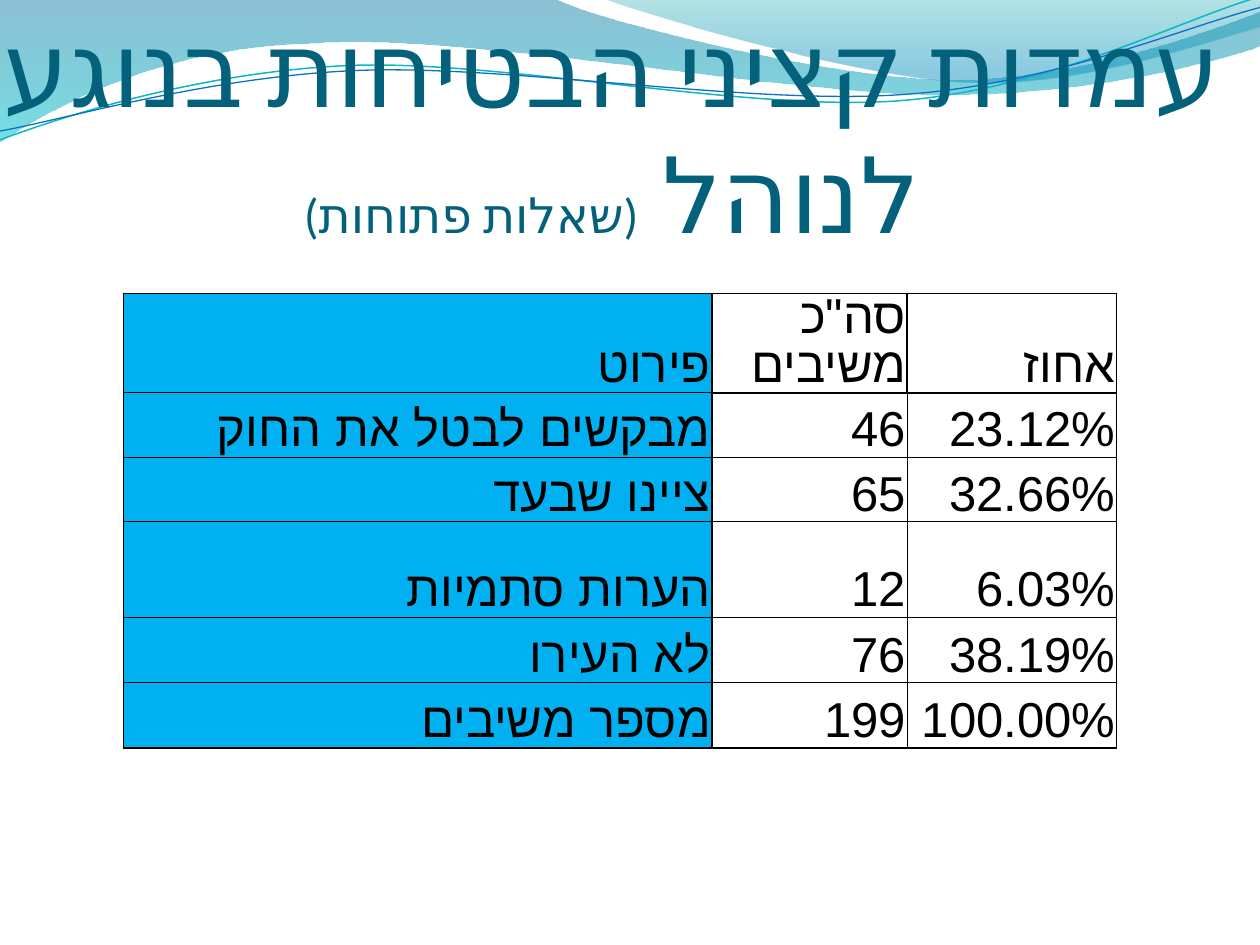
from dataclasses import dataclass
from math import cos, radians, sin
from lxml.etree import SubElement as Sub
from pptx import Presentation as Deck
from pptx.dml.color import RGBColor as Rgb
from pptx.enum.lang import MSO_LANGUAGE_ID as Lang
from pptx.enum.text import MSO_ANCHOR as Anchor, PP_ALIGN as Align
from pptx.oxml.ns import qn
from pptx.util import Inches as In, Pt


@dataclass(frozen=True)
class Theme:
    font: str = "Calibri"
    body: str = "Arial"
    title: str = "04617B"
    ink: str = "000000"
    blue: str = "00B0F0"
    teal: str = "0AB8BF"
    navy: str = "0F6FC6"
    big: int = 60
    small: int = 28
    thick: float = 1
    thin: float = 0.5
    tilt: float = 2.7


def turn(spot, mid, angle):
    x, y = spot[0] - mid[0], spot[1] - mid[1]
    c, s = cos(radians(angle)), sin(radians(angle))
    return mid[0] + x * c - y * s, mid[1] + x * s + y * c


class Page:
    """Draws styled elements on one slide."""

    def __init__(self, slide, theme):
        self.slide, self.theme = slide, theme

    def form(self, start, steps, close):
        spots = [(In(x), In(y)) for step in steps for x, y in step]
        pen = self.slide.shapes.build_freeform(In(start[0]), In(start[1]))
        pen.add_line_segments(spots, close=close)
        shape = pen.convert_to_shape()
        shape.shadow.inherit = False
        lines = iter(list(shape._element.iter(qn("a:lnTo"))))
        for step in steps:
            parts = [next(lines) for spot in step]
            if len(parts) == 3:
                parts[0].tag = qn("a:cubicBezTo")
                for part in parts[1:]:
                    parts[0].append(part[0])
                    part.getparent().remove(part)
        return shape

    def wave(self, start, steps, stops):
        shape = self.form(start, steps, True)
        shape.line.fill.background()
        shape.fill.gradient()
        shape.fill.gradient_angle = 270
        for stop, (place, color, alpha) in zip(shape.fill.gradient_stops, stops):
            stop.position = place
            stop.color.rgb = Rgb.from_string(color)
        tints = shape._element.spPr.iter(qn("a:srgbClr"))
        for tint, (place, color, alpha) in zip(tints, stops):
            Sub(tint, qn("a:alpha"), val=str(alpha * 1000))

    def curve(self, mid, start, steps, color, width):
        tilt = self.theme.tilt
        flat = [[turn(spot, mid, tilt) for spot in step] for step in steps]
        shape = self.form(turn(start, mid, tilt), flat, False)
        shape.rotation = -tilt
        shape.fill.background()
        shape.line.color.rgb = Rgb.from_string(color)
        shape.line.width = Pt(width)

    def style(self, run, font, size, color):
        run.font.name, run.font.size = font, Pt(size)
        run.font.language_id = Lang.HEBREW
        run.font.color.rgb = Rgb.from_string(color)
        Sub(run._r.get_or_add_rPr(), qn("a:cs"), typeface=font)

    def align(self, para, side):
        para.alignment = side
        para._p.get_or_add_pPr().set("rtl", "1")

    def title(self, box, main, note):
        look = self.theme
        frame = self.slide.shapes.add_textbox(*map(In, box)).text_frame
        frame.word_wrap = True
        frame.vertical_anchor = Anchor.BOTTOM
        frame.margin_left = frame.margin_right = frame.margin_bottom = 0
        para = frame.paragraphs[0]
        self.align(para, Align.CENTER)
        for text, size in ((main, look.big), (note, look.small)):
            run = para.add_run()
            run.text = text
            self.style(run, look.font, size, look.title)

    def edge(self, cell, tag, heavy):
        look = self.theme
        width = Pt(look.thick if heavy else look.thin)
        line = Sub(cell._tc.get_or_add_tcPr(), qn(tag), w=str(width))
        Sub(Sub(line, qn("a:solidFill")), qn("a:srgbClr"), val=look.ink)

    def cell(self, cell, text, color):
        look = self.theme
        cell.vertical_anchor = Anchor.BOTTOM
        cell.margin_left = cell.margin_right = cell.margin_top = In(0.01)
        cell.margin_bottom = 0
        if color:
            cell.fill.solid()
            cell.fill.fore_color.rgb = Rgb.from_string(color)
        else:
            cell.fill.background()
        cell.text_frame.text = text
        para = cell.text_frame.paragraphs[0]
        para.line_spacing = Pt(look.small)
        self.align(para, Align.RIGHT)
        self.style(para.runs[0], look.body, look.small, look.ink)

    def table(self, left, top, cols, rows, data):
        box = map(In, (left, top, sum(cols), sum(rows)))
        grid = self.slide.shapes.add_table(len(rows), len(cols), *box).table
        grid.first_row = grid.horz_banding = False
        for col, width in zip(grid.columns, cols):
            col.width = In(width)
        for row, height in zip(grid.rows, rows):
            row.height = In(height)

        def flat(i, c):
            return i in (0, len(rows)) or i == (1 if c else len(rows) - 1)

        def tall(j, r):
            return j != 2 or r == 0

        for r, texts in enumerate(data):
            for c, text in enumerate(texts):
                cell = grid.cell(r, c)
                self.edge(cell, "a:lnL", tall(c, r))
                self.edge(cell, "a:lnR", tall(c + 1, r))
                self.edge(cell, "a:lnT", flat(r, c))
                self.edge(cell, "a:lnB", flat(r + 1, c))
                self.cell(cell, text, None if c else self.theme.blue)


def main():
    deck = Deck()
    deck.slide_width, deck.slide_height = In(10), In(7.5)
    look = Theme()
    page = Page(deck.slides.add_slide(deck.slide_layouts[6]), look)

    page.wave((0, 0), [
        [(4.4, -0.01)],
        [(4.76, 0.17), (6.64, 0.63), (7.58, 0.63)],
        [(8.53, 0.63), (9.58, 0.26), (10, 0.09)],
        [(10.01, 0.36)],
        [(9.83, 0.44), (8.7, 0.76), (7.46, 0.75)],
        [(6.22, 0.75), (3.82, 0.28), (2.57, 0.34)],
        [(1.29, 0.36), (0.46, 0.83), (-0.01, 1.13)],
    ], [(0, "0074A1", 45), (1, "00C6CF", 55)])
    page.wave((4.79, -0.01), [
        [(5.09, 0.11), (6.82, 0.62), (7.69, 0.65)],
        [(8.56, 0.69), (9.61, 0.32), (10, 0.21)],
        [(10, 0)],
    ], [(0, "00A1A9", 30), (0.8, "008BBF", 45)])
    page.curve((4.99, 0.58), (0, 1.11), [
        [(0.48, 0.93), (1.58, 0.57), (2.77, 0.52)],
        [(3.95, 0.47), (5.93, 0.89), (7.13, 0.8)],
        [(8.33, 0.71), (9.38, 0.15), (9.98, -0.02)],
    ], look.teal, 0.85)
    page.curve((5, 0.59), (0, 1.04), [
        [(0.47, 0.96), (1.64, 0.61), (2.83, 0.56)],
        [(4.03, 0.51), (5.97, 0.84), (7.17, 0.75)],
        [(8.36, 0.67), (9.41, 0.21), (10, 0.06)],
    ], look.navy, 0.75)

    page.title((-0.02, 0.21, 9.76, 1.81),
               "עמדות קציני הבטיחות בנוגע לנוהל ", "(שאלות פתוחות)")
    page.table(0.98, 2.33, (4.67, 1.55, 1.66),
               (0.55, 0.51, 0.51, 0.76, 0.52, 0.52), [
        ("פירוט", 'סה"כ משיבים', "אחוז"),
        ("מבקשים לבטל את החוק", "46", "23.12%"),
        ("ציינו שבעד", "65", "32.66%"),
        ("הערות סתמיות", "12", "6.03%"),
        ("לא העירו", "76", "38.19%"),
        ("מספר משיבים", "199", "100.00%"),
    ])
    deck.save("out.pptx")


if __name__ == "__main__":
    main()
